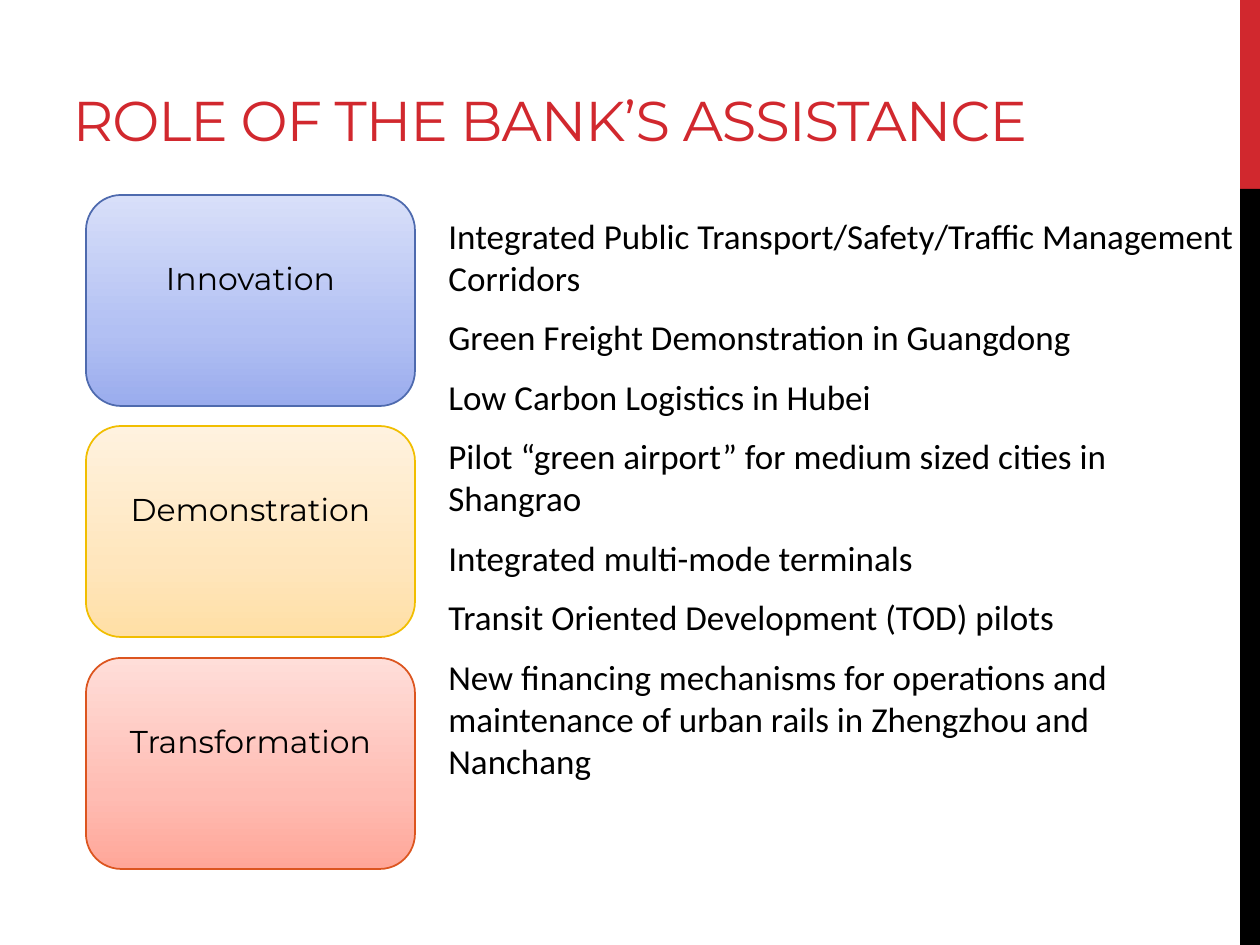
from copy import deepcopy
from dataclasses import dataclass

from pptx import Presentation, util as u
from pptx.dml.color import RGBColor
from pptx.enum import shapes, text

PX = u.Inches(1) / 126


@dataclass(frozen=True)
class Theme:
    red: str = "D1282E"
    black: str = "000000"
    heading_font: str = "Montserrat"
    body_font: str = "Calibri"
    title_size: int = 32
    body_size: int = 20
    stage_size: int = 18


@dataclass(frozen=True)
class Box:
    left: int
    top: int
    width: int
    height: int

    def emu(self) -> tuple[int, ...]:
        return tuple(px(n) for n in (self.left, self.top, self.width, self.height))


@dataclass(frozen=True)
class Stage:
    name: str
    gradient: tuple[str, str, str]  # bottom to top
    outline: str


THEME = Theme()
STAGES = (
    Stage("Innovation", ("9AACED", "B2C0F3", "D8DFF9"), "4E6AAE"),
    Stage("Demonstration", ("FFDFA5", "FFE6BD", "FFF2DF"), "F1BE00"),
    Stage("Transformation", ("FFA698", "FFBCB3", "FFDED9"), "DC551F"),
)
STAGE_BOX = Box(86, 195, 329, 211)
STAGE_PITCH = 231.5
GRADIENT_POSITIONS = (0, 0.35, 1)
INITIATIVES = (
    "Integrated Public Transport/Safety/Traffic Management Corridors",
    "Green Freight Demonstration in Guangdong",
    "Low Carbon Logistics in Hubei",
    "Pilot “green airport” for medium sized cities in Shangrao",
    "Integrated multi-mode terminals",
    "Transit Oriented Development (TOD) pilots",
    "New financing mechanisms for operations and maintenance of urban rails "
    "in Zhengzhou and Nanchang",
)


def px(length: float) -> int:
    return round(length * PX)


def rgb(code: str) -> RGBColor:
    return RGBColor.from_string(code)


def add_run(paragraph, words: str, font: str, size: int, color: str):
    run = paragraph.add_run()
    run.text = words
    run.font.name = font
    run.font.size = u.Pt(size)
    run.font.color.rgb = rgb(color)
    return run


def set_insets(frame, left: int, top: int, right: int, bottom: int) -> None:
    frame.margin_left, frame.margin_top = px(left), px(top)
    frame.margin_right, frame.margin_bottom = px(right), px(bottom)


def add_text_frame(slide, box: Box):
    frame = slide.shapes.add_textbox(*box.emu()).text_frame
    frame.word_wrap = True
    return frame


def add_side_band(slide, box: Box, color: str) -> None:
    band = slide.shapes.add_shape(shapes.MSO_SHAPE.RECTANGLE, *box.emu())
    band.shadow.inherit = False
    band.fill.solid()
    band.fill.fore_color.rgb = rgb(color)
    band.line.fill.background()


def fill_gradient(fill, colors: tuple[str, str, str]) -> None:
    """Fill from bottom to top, adding a middle stop to the default two."""
    fill.gradient()
    fill.gradient_angle = 90
    stop_list = fill._xPr.gradFill.gsLst
    stop_list.insert(1, deepcopy(stop_list[0]))
    for stop, position, color in zip(fill.gradient_stops, GRADIENT_POSITIONS, colors):
        stop.position = position
        stop.color.rgb = rgb(color)


def add_title(slide, words: str) -> None:
    frame = add_text_frame(slide, Box(63, 73, 1134, 83))
    frame.vertical_anchor = text.MSO_ANCHOR.BOTTOM
    set_insets(frame, 10, 6, 10, 3)
    run = add_run(frame.paragraphs[0], words, THEME.heading_font,
                  THEME.title_size, THEME.red)
    run.font._element.set("spc", "-60")


def add_stage(slide, stage: Stage, index: int) -> None:
    box = Box(STAGE_BOX.left, round(STAGE_BOX.top + index * STAGE_PITCH),
              STAGE_BOX.width, STAGE_BOX.height)
    card = slide.shapes.add_shape(shapes.MSO_SHAPE.ROUNDED_RECTANGLE, *box.emu())
    card.shadow.inherit = False
    fill_gradient(card.fill, stage.gradient)
    card.line.color.rgb = rgb(stage.outline)
    card.line.width = u.Pt(1)
    frame = card.text_frame
    frame.word_wrap = True
    frame.vertical_anchor = text.MSO_ANCHOR.MIDDLE
    set_insets(frame, 9, 0, 9, 46)  # lifts the name above the middle
    label = frame.paragraphs[0]
    label.alignment = text.PP_ALIGN.CENTER
    add_run(label, stage.name, THEME.heading_font, THEME.stage_size, THEME.black)


def add_initiatives(slide) -> None:
    frame = add_text_frame(slide, Box(436, 208, 814, 663))
    for index, words in enumerate(INITIATIVES):
        item = frame.add_paragraph() if index else frame.paragraphs[0]
        item.space_before = u.Pt(4)
        item.space_after = u.Pt(6)
        add_run(item, words, THEME.body_font, THEME.body_size, THEME.black)


def main() -> None:
    deck = Presentation()
    deck.slide_width, deck.slide_height = px(1260), px(945)
    slide = deck.slides.add_slide(deck.slide_layouts[6])
    add_side_band(slide, Box(1240, 0, 20, 189), THEME.red)
    add_side_band(slide, Box(1240, 189, 20, 756), THEME.black)
    add_title(slide, "ROLE OF THE BANK’S ASSISTANCE")
    add_initiatives(slide)
    for index, stage in enumerate(STAGES):
        add_stage(slide, stage, index)
    deck.save("out.pptx")


if __name__ == "__main__":
    main()
